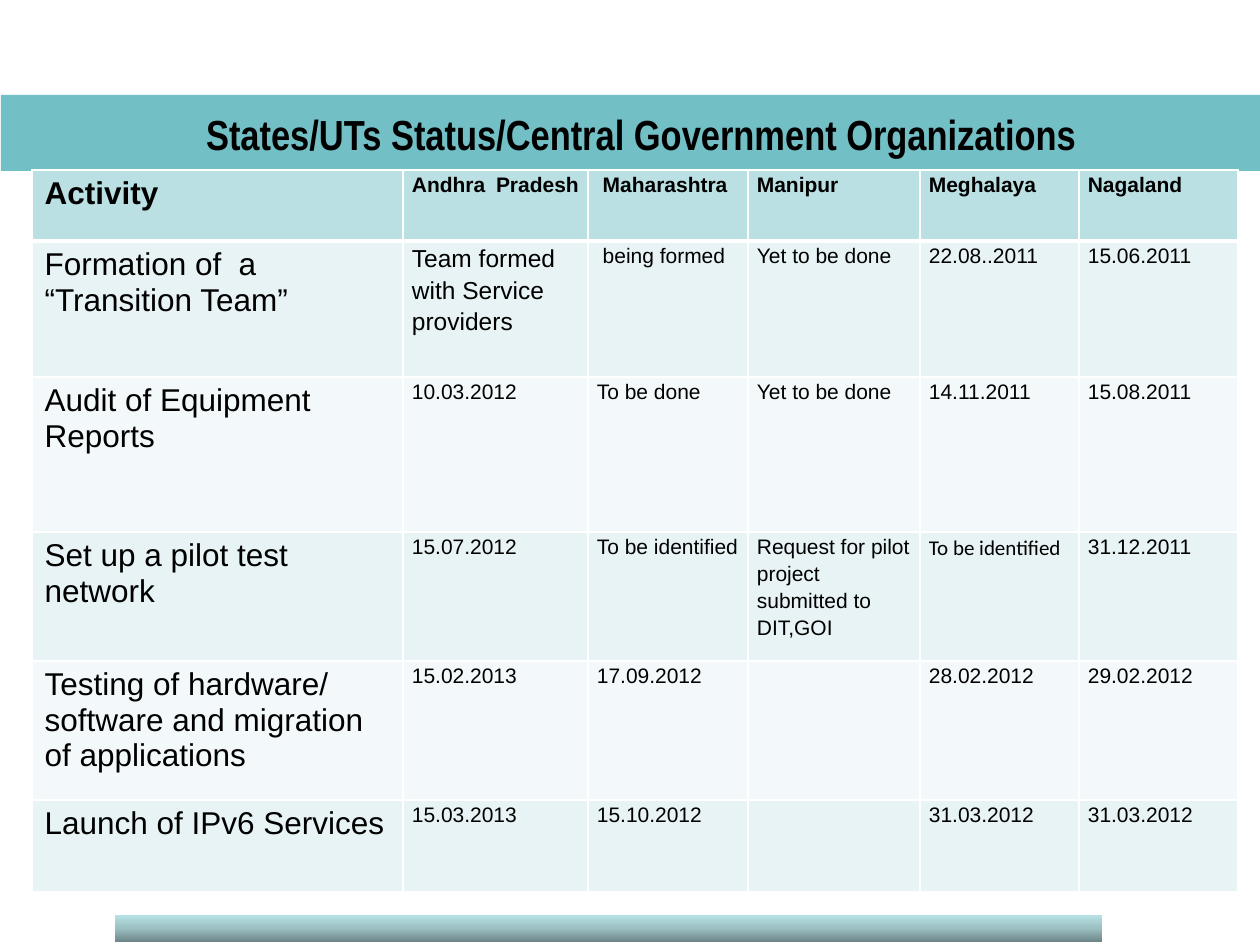
from lxml import etree
from pptx import Presentation
from pptx.dml.color import RGBColor
from pptx.enum.shapes import MSO_SHAPE
from pptx.enum.text import MSO_ANCHOR, PP_ALIGN
from pptx.oxml.ns import qn
from pptx.util import Emu, Pt

RECTANGLE = MSO_SHAPE.RECTANGLE
MIDDLE = MSO_ANCHOR.MIDDLE
CENTER, JUSTIFY, LEFT = PP_ALIGN.CENTER, PP_ALIGN.JUSTIFY, PP_ALIGN.LEFT

BLACK = RGBColor(0x00, 0x00, 0x00)
WHITE = RGBColor(0xFF, 0xFF, 0xFF)
TEAL = RGBColor(0x72, 0xBF, 0xC5)
HEADER_FILL = RGBColor(0xBB, 0xE0, 0xE3)
ROW_FILLS = [RGBColor(0xF3, 0xF9, 0xFA), RGBColor(0xE7, 0xF3, 0xF4)]
FOOTER_STOPS = [(0, RGBColor(0xB8, 0xE3, 0xE6)),
                (50, RGBColor(0x9B, 0xBF, 0xC2)),
                (100, RGBColor(0x6D, 0x86, 0x88))]


def px(length):
    return Emu(round(length * 914400 / 126))


def add_borders(cell, top, bottom):
    """Draw white cell borders; top and bottom are widths in points."""
    properties = cell._tc.get_or_add_tcPr()
    for side, width in (("L", 1), ("R", 1), ("T", top), ("B", bottom)):
        line = etree.SubElement(properties, qn(f"a:ln{side}"), w=str(Pt(width)))
        solid = etree.SubElement(line, qn("a:solidFill"))
        etree.SubElement(solid, qn("a:srgbClr"), val=str(WHITE))


presentation = Presentation()
presentation.slide_width, presentation.slide_height = px(1260), px(945)
slide = presentation.slides.add_slide(presentation.slide_layouts[5])

# Bands behind the title and at the foot
title_band = slide.shapes.add_shape(RECTANGLE, px(1), px(95), px(1259), px(76))
footer_band = slide.shapes.add_shape(RECTANGLE, px(115), px(915), px(987), px(27))
for depth, band in enumerate((title_band, footer_band)):
    band.shadow.inherit = False
    band.line.fill.background()
    slide.shapes._spTree.insert(2 + depth, band._element)
title_band.fill.solid()
title_band.fill.fore_color.rgb = TEAL

footer_band.fill.gradient()
gradient = footer_band._element.spPr.find(qn("a:gradFill"))
stops = gradient.find(qn("a:gsLst"))
for stop in list(stops):
    stops.remove(stop)
for percent, color in FOOTER_STOPS:
    stop = etree.SubElement(stops, qn("a:gs"), pos=str(percent * 1000))
    etree.SubElement(stop, qn("a:srgbClr"), val=str(color))
footer_band.fill.gradient_angle = 270

# Title
title = slide.shapes.title
title.left, title.top, title.width, title.height = px(63), px(105), px(1166), px(57)
title.text_frame.text = "States/UTs Status/Central Government Organizations "
title.text_frame.vertical_anchor = MIDDLE
heading = title.text_frame.paragraphs[0]
heading.alignment = CENTER
heading.font.name = "Arial Narrow"
heading.font.size = Pt(24)
heading.font.bold = True
heading.font.color.rgb = BLACK

# Status table
statuses = [
    ["Activity", "Andhra Pradesh ", " Maharashtra", "Manipur ", "Meghalaya ", "Nagaland "],
    ["Formation of  a “Transition Team”", "Team formed with Service providers",
     " being formed", "Yet to be done", "22.08..2011", "15.06.2011"],
    ["Audit of Equipment Reports", "10.03.2012", "To be done", "Yet to be done",
     "14.11.2011", "15.08.2011"],
    ["Set up a pilot test network", "15.07.2012", "To be identified",
     "Request for pilot project submitted to DIT,GOI", "To be identified", "31.12.2011"],
    ["Testing of hardware/ software and migration of applications", "15.02.2013",
     "17.09.2012", "", "28.02.2012", "29.02.2012"],
    ["Launch of IPv6 Services", "15.03.2013", "15.10.2012", "", "31.03.2012", "31.03.2012"],
]
column_widths = [371, 185, 160, 172, 159, 159]
row_heights = [71, 136, 155, 129, 139, 92]
special_sizes = {(1, 1): 14}
special_fonts = {(3, 4): "Calibri"}

table = slide.shapes.add_table(len(row_heights), len(column_widths), px(32), px(170),
                               px(sum(column_widths)), px(sum(row_heights))).table
for column, width in zip(table.columns, column_widths):
    column.width = px(width)
for row, height in zip(table.rows, row_heights):
    row.height = px(height)

for r, row_texts in enumerate(statuses):
    is_header = r == 0
    for c, text in enumerate(row_texts):
        cell = table.cell(r, c)
        add_borders(cell, top=3 if r == 1 else 1, bottom=3 if is_header else 1)
        cell.fill.solid()
        cell.fill.fore_color.rgb = HEADER_FILL if is_header else ROW_FILLS[r % 2]
        cell.text_frame.text = text
        paragraph = cell.text_frame.paragraphs[0]
        if c > 0:
            cell.margin_left = cell.margin_right = px(9)
            cell.margin_top = cell.margin_bottom = 0
            paragraph.line_spacing = 1.15
            paragraph.alignment = JUSTIFY if is_header else LEFT
        for run in paragraph.runs:
            run.font.name = special_fonts.get((r, c), "Arial")
            run.font.size = Pt(special_sizes.get((r, c), 12 if c > 0 else 18))
            run.font.bold = is_header
            run.font.color.rgb = BLACK

presentation.save("out.pptx")
